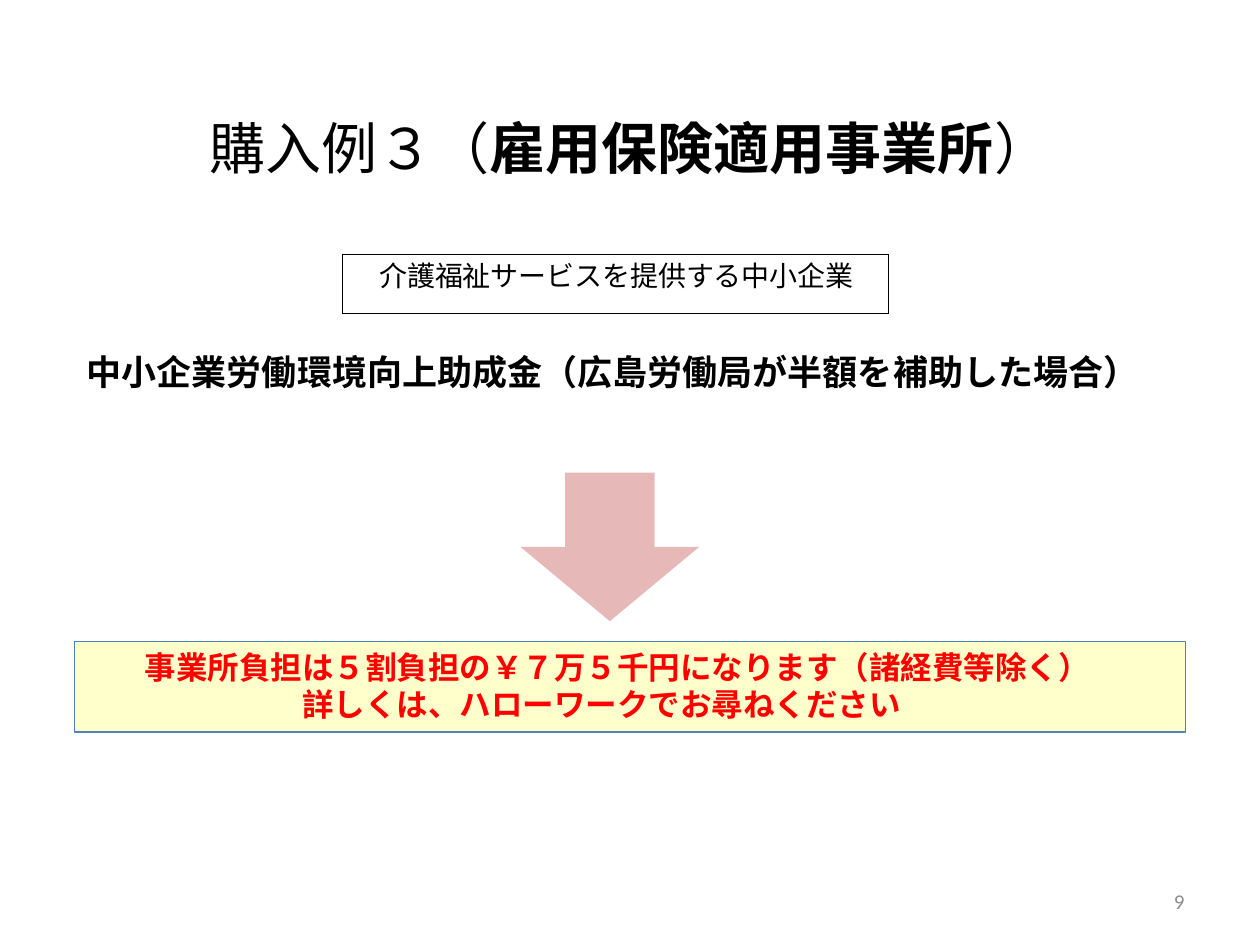
from lxml.etree import SubElement
from pptx import Presentation
from pptx.dml.color import RGBColor
from pptx.enum.shapes import MSO_SHAPE
from pptx.enum.text import MSO_ANCHOR, PP_ALIGN
from pptx.oxml.ns import qn
from pptx.util import Inches, Pt

TITLE = [
    ("購入例３（", "Calibri", False),
    ("雇用保険適用事業所", "Arial", True),
    ("）", "Calibri", False),
]
AUDIENCE = "介護福祉サービスを提供する中小企業"
SUBSIDY = "中小企業労働環境向上助成金（広島労働局が半額を補助した場合）"
COST_LINES = [
    ("事業所負担は５割負担の￥７万５千円になります（諸経費等除く）", 0.46),
    ("詳しくは、ハローワークでお尋ねください", 1.71),
]
PAGE_NUMBER = "9"


def box(*lengths):
    return [Inches(length) for length in lengths]


def color(hex_value):
    return RGBColor.from_string(hex_value)


def apply(target, formats):
    for attribute, value in formats.items():
        setattr(target, attribute, value)


def add_run(paragraph, text, size, font, hex_value, bold=False):
    run = paragraph.add_run()
    run.text = text
    apply(run.font, {"size": Pt(size), "name": font, "bold": bold})
    run.font.color.rgb = color(hex_value)


def frame_format(left=0.1, top=0.05, right=0.1, bottom=0.05):
    return {
        "word_wrap": True,
        "vertical_anchor": MSO_ANCHOR.MIDDLE,
        "margin_left": Inches(left),
        "margin_top": Inches(top),
        "margin_right": Inches(right),
        "margin_bottom": Inches(bottom),
    }


def add_label(slide, place, text, alignment, *style):
    frame = slide.shapes.add_textbox(*box(*place)).text_frame
    apply(frame, frame_format())
    paragraph = frame.paragraphs[0]
    paragraph.alignment = alignment
    add_run(paragraph, text, *style)


def add_block(slide, preset, place, fill):
    block = slide.shapes.add_shape(preset, *box(*place))
    block.shadow.inherit = False
    block.fill.solid()
    block.fill.fore_color.rgb = color(fill)
    block.line.fill.background()
    return block


def add_borders(cell, hex_value, width):
    properties = cell._tc.get_or_add_tcPr()
    for index, side in enumerate(("a:lnL", "a:lnR", "a:lnT", "a:lnB")):
        border = properties.makeelement(qn(side), {"w": str(Pt(width))})
        fill = SubElement(border, qn("a:solidFill"))
        SubElement(fill, qn("a:srgbClr"), val=hex_value)
        properties.insert(index, border)


def add_title(slide):
    title = slide.shapes.title
    title.left, title.top, title.width, title.height = box(0.75, 0.36, 8.5, 1.61)
    apply(title.text_frame, frame_format())
    paragraph = title.text_frame.paragraphs[0]
    paragraph.alignment = PP_ALIGN.CENTER
    for text, font, bold in TITLE:
        add_run(paragraph, text, 32, font, "000000", bold)


def add_audience(slide):
    table = slide.shapes.add_table(1, 1, *box(2.72, 2.02, 4.33, 0.47)).table
    apply(table, {"first_row": False, "horz_banding": False})
    cell = table.cell(0, 0)
    apply(cell, frame_format(0.29, 0, 0.07, 0) | {"vertical_anchor": MSO_ANCHOR.TOP}
          if hasattr(cell, "word_wrap") else
          {"margin_left": Inches(0.29), "margin_top": 0,
           "margin_right": Inches(0.07), "margin_bottom": 0})
    cell.fill.background()
    add_borders(cell, "000000", 1)
    add_run(cell.text_frame.paragraphs[0], AUDIENCE, 16, "Cambria", "000000")


def add_cost(slide):
    cost = add_block(slide, MSO_SHAPE.RECTANGLE, (0.59, 5.09, 8.82, 0.72), "FFFFCC")
    cost.line.color.rgb = color("4F81BD")
    cost.line.width = Pt(0.75)
    frame = cost.text_frame
    apply(frame, frame_format(bottom=0.07))
    for index, (text, indent) in enumerate(COST_LINES):
        paragraph = frame.add_paragraph() if index else frame.paragraphs[0]
        paragraph.alignment = PP_ALIGN.LEFT
        paragraph._p.get_or_add_pPr().set("indent", str(Inches(indent)))
        add_run(paragraph, text, 18, "Cambria", "FF0000", True)


def main():
    presentation = Presentation()
    apply(presentation, {"slide_width": Inches(10), "slide_height": Inches(7.5)})
    slide = presentation.slides.add_slide(presentation.slide_layouts[5])
    add_title(slide)
    add_label(slide, (7.17, 6.95, 2.33, 0.4), PAGE_NUMBER, PP_ALIGN.RIGHT,
              12, "Calibri", "8C8C8C")
    add_audience(slide)
    add_label(slide, (0.59, 2.73, 8.66, 0.44), SUBSIDY, PP_ALIGN.LEFT,
              20, "Cambria", "000000", True)
    add_block(slide, MSO_SHAPE.DOWN_ARROW, (4.13, 3.75, 1.42, 1.18), "E6B9B8")
    add_cost(slide)
    presentation.save("out.pptx")


if __name__ == "__main__":
    main()
